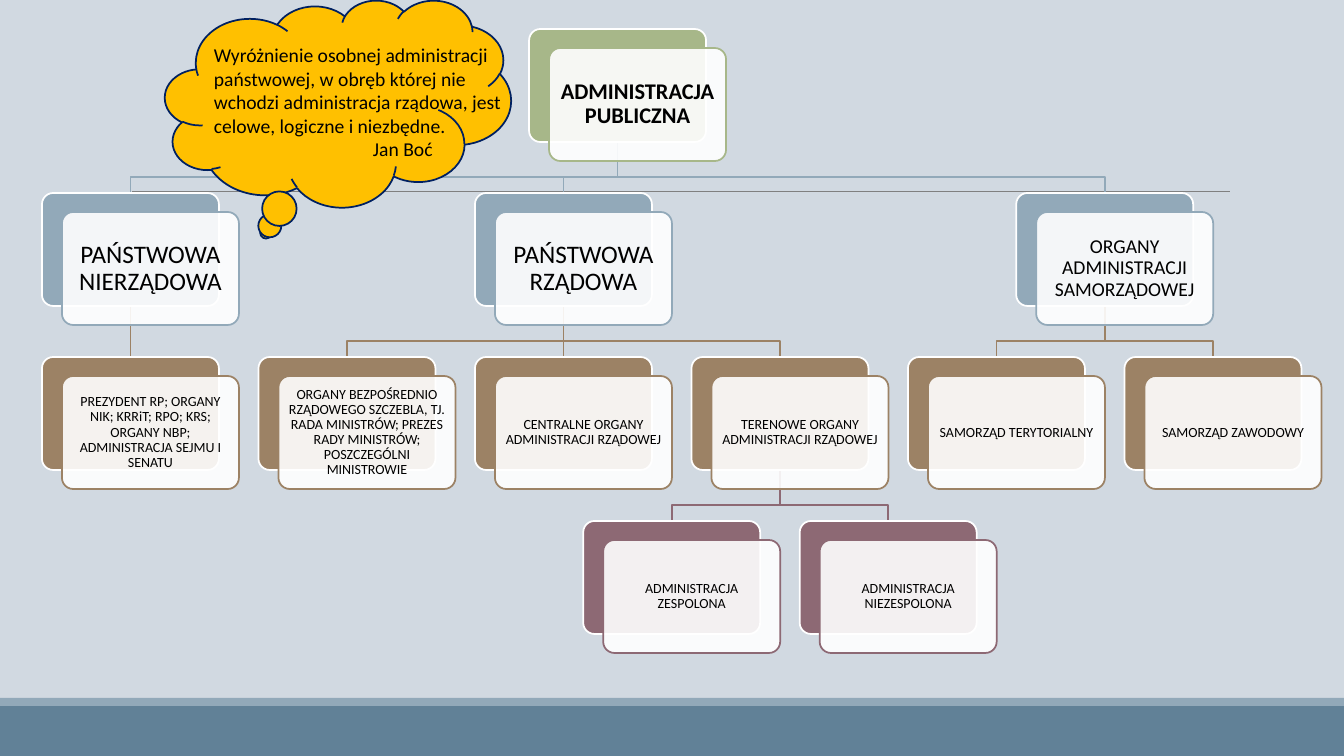
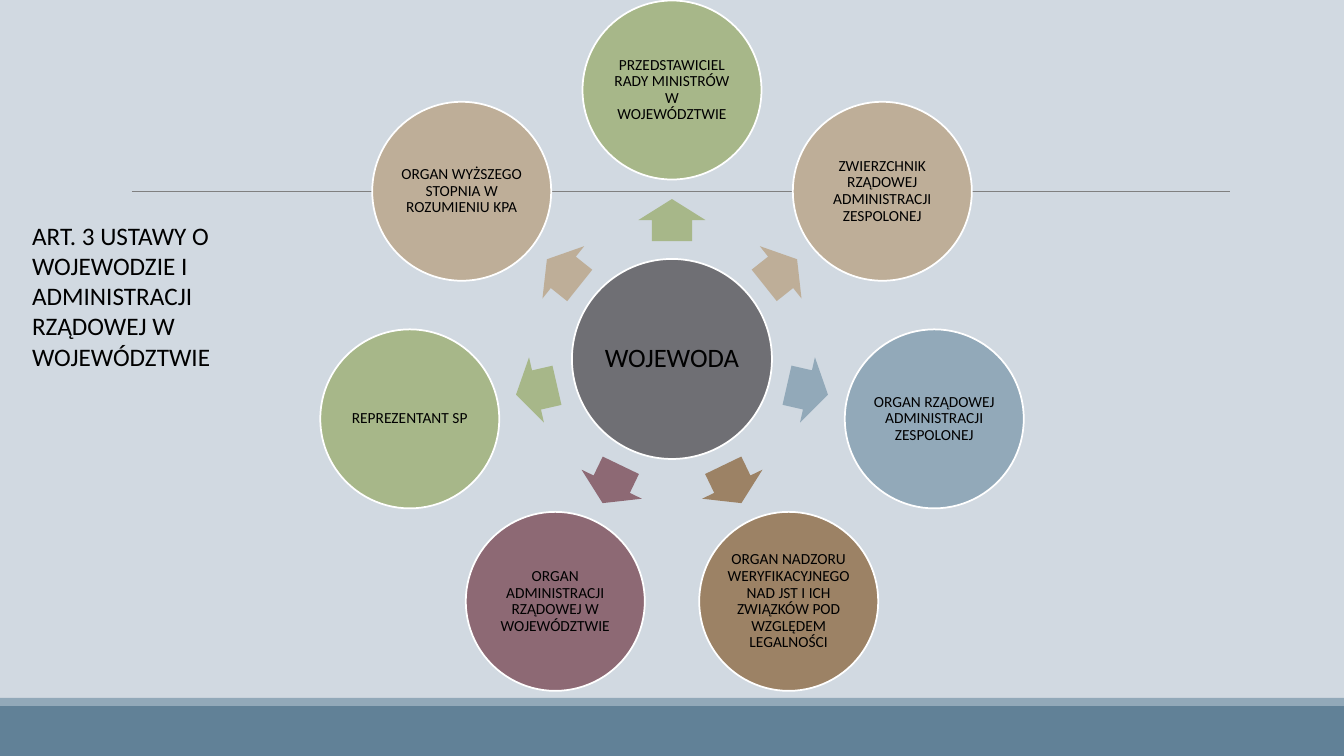
import math

import pptx
import pptx.dml.color
import pptx.enum.shapes
import pptx.enum.text
import pptx.oxml.ns
import pptx.util
from lxml import etree

SHAPE = pptx.enum.shapes.MSO_SHAPE
ALIGN = pptx.enum.text.PP_ALIGN
ANCHOR = pptx.enum.text.MSO_ANCHOR

# Shared look
WIDTH, HEIGHT = 1344, 756
SCALE = 12192000 / WIDTH
FONT = "Calibri"
BLACK, WHITE, GREY = "000000", "FFFFFF", "808080"
BACKGROUND, BAND = "D1D9E1", "618197"
GREEN, BLUE, BROWN, PLUM, SAND = "A7B789", "92A9B9", "9C8265", "8D6974", "BEAE98"
HUB_GREY, AMBER, NAVY = "6F6F74", "FFC000", "002060"
OUTLINE = 1.25

# Slide 1: key, parent, level, column, point size, padding, text
CARDS = [
    ("public", None, 0, 2.25, 16, 7, "ADMINISTRACJA PUBLICZNA"),
    ("state", "public", 1, 0, 18, 7, "PAŃSTWOWA NIERZĄDOWA"),
    ("government", "public", 1, 2, 18, 7, "PAŃSTWOWA RZĄDOWA"),
    ("local", "public", 1, 4.5, 14, 6, "ORGANY ADMINISTRACJI SAMORZĄDOWEJ"),
    ("president", "state", 2, 0, 10, 4,
     "PREZYDENT RP; ORGANY NIK; KRRiT; RPO; KRS; ORGANY NBP; ADMINISTRACJA SEJMU I SENATU"),
    ("ministers", "government", 2, 1, 10, 4,
     "ORGANY BEZPOŚREDNIO RZĄDOWEGO SZCZEBLA, TJ. RADA MINISTRÓW; PREZES RADY MINISTRÓW; "
     "POSZCZEGÓLNI MINISTROWIE"),
    ("central", "government", 2, 2, 10, 4, "CENTRALNE ORGANY ADMINISTRACJI RZĄDOWEJ"),
    ("field", "government", 2, 3, 10, 4, "TERENOWE ORGANY ADMINISTRACJI RZĄDOWEJ"),
    ("territorial", "local", 2, 4, 10, 4, "SAMORZĄD TERYTORIALNY"),
    ("professional", "local", 2, 5, 10, 4, "SAMORZĄD ZAWODOWY"),
    ("combined", "field", 3, 2.5, 10, 4, "ADMINISTRACJA ZESPOLONA"),
    ("separate", "field", 3, 3.5, 10, 4, "ADMINISTRACJA NIEZESPOLONA"),
]
LEVEL_COLORS = [GREEN, BLUE, BROWN, PLUM]
QUOTE = ("Wyróżnienie osobnej administracji państwowej, w obręb której nie wchodzi "
         "administracja rządowa, jest celowe, logiczne i niezbędne.")
AUTHOR = "Jan Boć"
CARD_W, CARD_H = 177, 113
TREE_LEFT, TREE_TOP = 42, 29
COLUMN_STEP, LEVEL_STEP = 433 / 2, 164
FRONT_DX, FRONT_DY = 20, 19
ELBOW_DROP = 35

# Slide 2: roles clockwise from the top
TITLE = "ART. 3 USTAWY O WOJEWODZIE I ADMINISTRACJI RZĄDOWEJ W WOJEWÓDZTWIE"
HUB = "WOJEWODA"
ROLES = [
    ("PRZEDSTAWICIEL RADY MINISTRÓW W WOJEWÓDZTWIE", GREEN),
    ("ZWIERZCHNIK RZĄDOWEJ ADMINISTRACJI ZESPOLONEJ", SAND),
    ("ORGAN RZĄDOWEJ ADMINISTRACJI ZESPOLONEJ", BLUE),
    ("ORGAN NADZORU WERYFIKACYJNEGO NAD JST I ICH ZWIĄZKÓW POD WZGLĘDEM LEGALNOŚCI", BROWN),
    ("ORGAN ADMINISTRACJI RZĄDOWEJ W WOJEWÓDZTWIE", PLUM),
    ("REPREZENTANT SP", GREEN),
    ("ORGAN WYŻSZEGO STOPNIA W ROZUMIENIU KPA", SAND),
]
CENTER_X, CENTER_Y = 672, 359
HUB_SIZE, ROLE_SIZE = 200, 179
ROLE_RADIUS, ARROW_RADIUS = 269, 139
ARROW_W, ARROW_H = 42, 67


def px(n):
    return pptx.util.Emu(round(n * SCALE))


def rgb(color):
    return pptx.dml.color.RGBColor.from_string(color)


def write(tf, text, size=10, bold=False, align=ALIGN.CENTER, spacing=None,
          anchor=ANCHOR.MIDDLE, padding=None, indent=0, new=False):
    """Put one formatted paragraph into a text frame."""
    tf.word_wrap = True
    tf.vertical_anchor = anchor
    if padding is not None:
        tf.margin_left = tf.margin_right = tf.margin_top = tf.margin_bottom = px(padding)
    p = tf.add_paragraph() if new else tf.paragraphs[0]
    p.alignment = align
    if spacing:
        p.line_spacing = spacing
    if indent:
        p._p.get_or_add_pPr().set("marL", str(px(indent)))
    r = p.add_run()
    r.text = text
    r.font.name, r.font.size, r.font.bold = FONT, pptx.util.Pt(size), bold
    r.font.color.rgb = rgb(BLACK)


def style(sp, fill=None, line=None, alpha=None):
    sp.shadow.inherit = False
    if fill:
        sp.fill.solid()
        sp.fill.fore_color.rgb = rgb(fill)
    else:
        sp.fill.background()
    if alpha:
        color = sp.fill._xPr.find(".//" + pptx.oxml.ns.qn("a:srgbClr"))
        etree.SubElement(color, pptx.oxml.ns.qn("a:alpha")).set("val", str(alpha * 1000))
    if line:
        sp.line.color.rgb = rgb(line)
        sp.line.width = pptx.util.Pt(OUTLINE)
    else:
        sp.line.fill.background()


def add_shape(slide, kind, x, y, w, h, adjust=(), **look):
    sp = slide.shapes.add_shape(kind, px(x), px(y), px(w), px(h))
    for i, value in enumerate(adjust):
        sp.adjustments[i] = value
    style(sp, **look)
    return sp


def add_centered(slide, kind, cx, cy, w, h, **look):
    return add_shape(slide, kind, cx - w / 2, cy - h / 2, w, h, **look)


def add_line(slide, x1, y1, x2, y2, color, width):
    line = slide.shapes.add_connector(
        pptx.enum.shapes.MSO_CONNECTOR.STRAIGHT, px(x1), px(y1), px(x2), px(y2))
    line.line.color.rgb = rgb(color)
    line.line.width = pptx.util.Pt(width)
    etree.SubElement(line._element.spPr, pptx.oxml.ns.qn("a:effectLst"))
    return line


def decorate_master(prs, slide):
    """Background, footer bands and rule, shared through the master."""
    master = prs.slide_master
    master.background.fill.solid()
    master.background.fill.fore_color.rgb = rgb(BACKGROUND)
    parts = [
        add_shape(slide, SHAPE.RECTANGLE, 0, 706, WIDTH, 50, fill=BAND),
        add_shape(slide, SHAPE.RECTANGLE, 0, 698, WIDTH, 8, fill=BLUE),
        add_line(slide, 132, 191, 1230, 191, GREY, 0.5),
    ]
    for part in parts:
        master.shapes._spTree.append(part._element)


def card_corner(level, column):
    return TREE_LEFT + column * COLUMN_STEP, TREE_TOP + level * LEVEL_STEP


def add_branch(slide, parent, child, color):
    """Line from the bottom of one card to the top of another."""
    x1, y1 = parent[0] + CARD_W / 2, parent[1] + CARD_H
    x2, y2 = child[0] + CARD_W / 2, child[1]
    if x1 == x2:
        add_line(slide, x1, y1, x2, y2, color, OUTLINE)
        return
    bend = y1 + ELBOW_DROP
    path = slide.shapes.build_freeform(px(x1), px(y1))
    path.add_line_segments(
        [(px(x), px(y)) for x, y in ((x1, bend), (x2, bend), (x2, y2))], close=False)
    style(path.convert_to_shape(), line=color)


def build_tree(slide):
    corners = {key: card_corner(level, column) for key, _, level, column, *_ in CARDS}
    for key, parent, level, *_ in CARDS:
        if parent:
            add_branch(slide, corners[parent], corners[key], LEVEL_COLORS[level])

    # Cards: coloured back, translucent front with the text
    for key, _, level, _, size, padding, text in CARDS:
        x, y = corners[key]
        color = LEVEL_COLORS[level]
        add_shape(slide, SHAPE.ROUNDED_RECTANGLE, x, y, CARD_W, CARD_H,
                  adjust=[0.1], fill=color, line=WHITE)
        front = add_shape(slide, SHAPE.ROUNDED_RECTANGLE, x + FRONT_DX, y + FRONT_DY,
                          CARD_W, CARD_H, adjust=[0.1], fill=WHITE, alpha=90, line=color)
        write(front.text_frame, text, size=size, bold=level == 0,
              spacing=0.9, padding=padding)

    # Quotation
    add_shape(slide, SHAPE.CLOUD_CALLOUT, 165, 0, 346, 207, fill=AMBER, line=NAVY)
    tf = slide.shapes.add_textbox(px(204), px(38), px(320), px(159)).text_frame
    write(tf, QUOTE, size=14, align=ALIGN.LEFT, anchor=ANCHOR.TOP)
    write(tf, AUTHOR, size=14, align=ALIGN.LEFT, anchor=ANCHOR.TOP, indent=159, new=True)


def build_wheel(slide):
    # Title
    title = slide.shapes.title
    title.left, title.top, title.width, title.height = px(22), px(215), px(276), px(163)
    title.text_frame.auto_size = pptx.enum.text.MSO_AUTO_SIZE.NONE
    write(title.text_frame, TITLE, size=18, align=ALIGN.LEFT, anchor=ANCHOR.TOP)

    # Hub
    hub = add_centered(slide, SHAPE.OVAL, CENTER_X, CENTER_Y, HUB_SIZE, HUB_SIZE,
                       fill=HUB_GREY, line=WHITE)
    write(hub.text_frame, HUB, size=19, spacing=0.9, padding=3)

    # Arrows and roles
    for i, (text, color) in enumerate(ROLES):
        angle = 360 * i / len(ROLES) - 90
        dx, dy = math.cos(math.radians(angle)), math.sin(math.radians(angle))
        arrow = add_centered(slide, SHAPE.RIGHT_ARROW, CENTER_X + ARROW_RADIUS * dx,
                             CENTER_Y + ARROW_RADIUS * dy, ARROW_W, ARROW_H,
                             adjust=[0.6, 0.5], fill=color)
        arrow.rotation = angle % 360
        role = add_centered(slide, SHAPE.OVAL, CENTER_X + ROLE_RADIUS * dx,
                            CENTER_Y + ROLE_RADIUS * dy, ROLE_SIZE, ROLE_SIZE,
                            fill=color, line=WHITE)
        write(role.text_frame, text, size=11, spacing=0.9, padding=2)


def main():
    prs = pptx.Presentation()
    prs.slide_width, prs.slide_height = px(WIDTH), px(HEIGHT)
    title_only, blank = prs.slide_layouts[5], prs.slide_layouts[6]
    tree = prs.slides.add_slide(blank)
    decorate_master(prs, tree)
    build_tree(tree)
    build_wheel(prs.slides.add_slide(title_only))
    prs.save("out.pptx")


if __name__ == "__main__":
    main()
